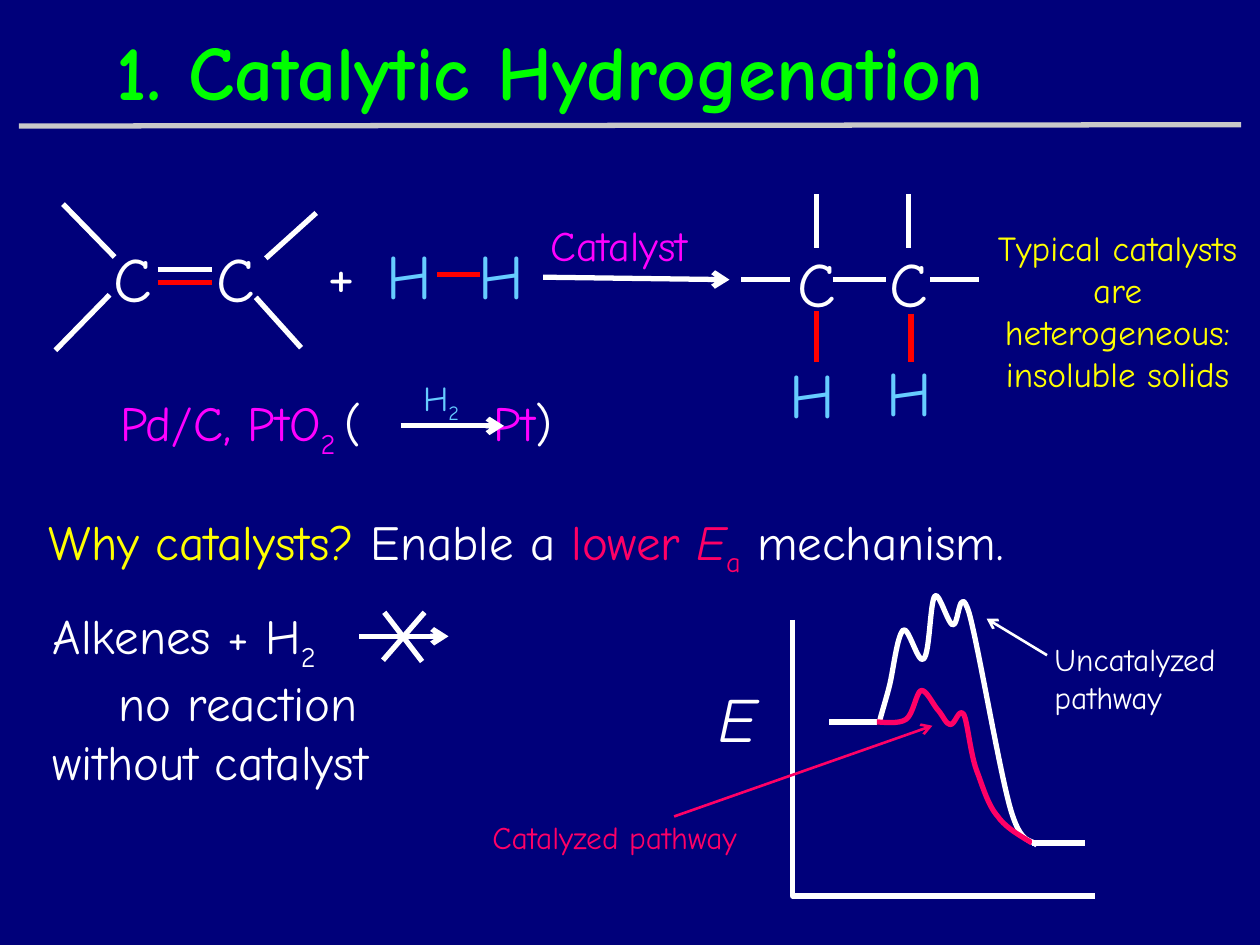
from lxml import etree
from pptx import Presentation
from pptx.dml.color import RGBColor
from pptx.enum import shapes, text
from pptx.oxml import ns

PX = 9144
FONT = "Comic Neue"
HUES = {
    "navy": "00007A", "white": "FFFFFF", "green": "00FF00", "pink": "FF00FF",
    "red": "FF0000", "sky": "66CCFF", "yellow": "FFFF00", "rose": "FF0066",
    "gray": "C9C9C9",
}


def hue(name):
    return RGBColor.from_string(HUES[name])


def emu(*nums):
    return [round(n * PX) for n in nums]


def style(line, tint, width):
    line.color.rgb = hue(tint)
    line.width = round(width * 12700)


def link(parent, box, ends, tint="white", width=3, arrow=False):
    x, y = box
    x1, y1, x2, y2 = ends
    rule = parent.shapes.add_connector(
        shapes.MSO_CONNECTOR.STRAIGHT, *emu(x + x1, y + y1, x + x2, y + y2))
    style(rule.line, tint, width)
    if arrow:
        tail = etree.SubElement(rule.line._get_or_add_ln(), ns.qn("a:tailEnd"))
        tail.set("type", "arrow")
    etree.SubElement(rule._element.spPr, ns.qn("a:effectLst"))


def trace(slide, box, dots, tint="white"):
    x, y = box
    spots = [emu(x + a, y + b) for a, b in dots]
    pen = slide.shapes.build_freeform(*spots[0], scale=1)
    pen.add_line_segments(spots[1:], close=False)
    shape = pen.convert_to_shape()
    shape.shadow.inherit = False
    shape.fill.background()
    style(shape.line, tint, 3)
    return shape


def curve(slide, box, start, arcs, tint="white"):
    dots = [start]
    for arc in arcs:
        dots += zip(arc[::2], arc[1::2])
    shape = trace(slide, box, dots, tint)
    legs = list(shape._element.iter(ns.qn("a:lnTo")))
    for n in range(0, len(legs), 3):
        trio = legs[n:n + 3]
        bend = etree.Element(ns.qn("a:cubicBezTo"))
        trio[0].addprevious(bend)
        for leg in trio:
            bend.append(leg[0])
            leg.getparent().remove(leg)


def add_run(para, words, size, tint, mode=""):
    run = para.add_run()
    run.text = words
    font = run.font
    font.name, font.size = FONT, size * 12700
    font.color.rgb = hue(tint)
    if mode == "bold":
        font.bold = True
    elif mode == "slant":
        font.italic = True
    elif mode == "sub":
        font._element.set("baseline", "-25000")


def add_tab(para, spot):
    stops = etree.SubElement(para._p.get_or_add_pPr(), ns.qn("a:tabLst"))
    stop = etree.SubElement(stops, ns.qn("a:tab"))
    stop.set("pos", str(spot * PX))
    stop.set("algn", "l")


def label(slide, box, area, size, *runs, wrap=True):
    x, y = box
    left, top, wide, high = area
    frame = slide.shapes.add_textbox(*emu(x + left, y + top, wide, high)).text_frame
    frame.word_wrap = wrap
    frame.auto_size = text.MSO_AUTO_SIZE.SHAPE_TO_FIT_TEXT
    para = frame.paragraphs[0]
    for words, *looks in runs:
        add_run(para, words, size, *looks)
    return para


def header(slide, box):
    label(slide, box, (68, 0, 835, 84), 44, ("1. Catalytic Hydrogenation", "green", "bold"))
    link(slide, box, (0, 86, 970, 85), "gray")


def alkene(slide, box):
    for left in (36, 118):
        label(slide, box, (left, 23, 69, 70), 36, ("C", "white"))
    for y, tint in ((52, "white"), (62, "red")):
        link(slide, box, (81, y, 124, y), tint)
    for ends in ((167, 43, 207, 7), (159, 74, 195, 114),
                 (47, 42, 6, 0), (43, 72, 0, 116)):
        link(slide, box, ends)


def reagents(slide, box):
    label(slide, box, (0, 12, 56, 70), 36, ("+", "white"))
    for left, wide in ((47, 52), (120, 62)):
        label(slide, box, (left, 14, wide, 70), 36, ("H", "sky"))
    link(slide, box, (97, 49, 131, 49), "red")
    label(slide, box, (177, 0, 149, 50), 24, ("Catalyst", "pink"))
    link(slide, box, (181, 51, 329, 53), arrow=True)


def alkane(slide, box):
    for left in (35, 108):
        label(slide, box, (left, 35, 69, 70), 36, ("C", "white"))
    for x1, x2 in ((73, 115), (150, 189), (39, 0)):
        link(slide, box, (x1, 68, x2, 68))
    for x, top in ((60, 93), (135, 95)):
        link(slide, box, (x, top, x, 133), "red")
    for x in (133, 60):
        link(slide, box, (x, 0, x, 43))
    for left, top, wide in ((29, 123, 52), (106, 122, 62)):
        label(slide, box, (left, top, wide, 70), 36, ("H", "sky"))


def remark(slide, box):
    para = label(slide, box, (0, 0, 234, 145), 20,
                 ("Typical catalysts are heterogeneous: insoluble solids", "yellow"))
    para.alignment = text.PP_ALIGN.CENTER


def reason(slide, box):
    label(slide, box, (0, 0, 873, 57), 28, ("Why catalysts?", "yellow"),
          (" Enable a ", "white"), ("lower ", "rose"), ("E", "rose", "slant"),
          ("a", "rose", "sub"), (" mechanism.", "white"))


def failure(slide, box):
    para = label(slide, box, (0, 0, 342, 150), 28,
                 ("Alkenes + H", "white"), ("2", "white", "sub"))
    add_tab(para, 52)
    para.add_line_break()
    add_run(para, "\tno reaction without catalyst", 28, "white")
    cross = slide.shapes.add_group_shape()
    link(cross, box, (253, 29, 324, 29), arrow=True)
    link(cross, box, (305, 10, 272, 48))
    link(cross, box, (273, 10, 303, 49))


def metals(slide, box):
    para = label(slide, box, (0, 13, 430, 57), 28, ("Pd/C, PtO", "pink"),
                 ("2 ", "pink", "sub"), ("(\t", "white"), ("Pt", "pink"), (")", "white"))
    add_tab(para, 296)
    link(slide, box, (232, 44, 314, 44), arrow=True)
    label(slide, box, (240, 0, 65, 43), 20, ("H", "sky"), ("2", "sky", "sub"))


def energy(slide, box):
    trace(slide, box, ((248, 31), (248, 250), (488, 250)))
    link(slide, box, (277, 112, 315, 112))
    curve(slide, box, (317, 112), (
        (318, 107, 322, 95, 325, 83), (328, 71, 331, 43, 336, 39),
        (340, 36, 348, 67, 352, 62), (357, 58, 357, 17, 361, 12),
        (364, 8, 371, 33, 375, 35), (380, 37, 380, 0, 388, 25),
        (395, 49, 412, 150, 421, 181), (430, 212, 438, 204, 442, 210)))
    curve(slide, box, (315, 112), (
        (319, 112, 332, 114, 338, 110), (344, 106, 346, 89, 350, 87),
        (354, 86, 359, 97, 363, 102), (367, 106, 370, 114, 373, 114),
        (377, 115, 380, 100, 384, 106), (387, 112, 389, 136, 394, 150),
        (399, 163, 403, 178, 411, 187), (418, 197, 432, 204, 438, 208)), "rose")
    label(slide, box, (179, 73, 48, 70), 36, ("E", "white", "slant"))
    link(slide, box, (438, 208, 480, 208))
    link(slide, box, (154, 187, 359, 115), "rose", 1.5, True)
    label(slide, box, (0, 183, 237, 40), 18, ("Catalyzed pathway", "rose"), wrap=False)
    link(slide, box, (450, 59, 402, 30), "white", 1.5, True)
    label(slide, box, (446, 42, 164, 70), 18, ("Uncatalyzed pathway", "white"))


def main():
    deck = Presentation()
    deck.slide_width, deck.slide_height = emu(1000, 750)
    slide = deck.slides.add_slide(deck.slide_layouts[6])
    slide.background.fill.solid()
    slide.background.fill.fore_color.rgb = hue("navy")
    for draw, box in (
            (header, (15, 14)), (alkene, (44, 162)), (reagents, (250, 169)),
            (alkane, (588, 154)), (remark, (770, 175)), (reason, (29, 401)),
            (failure, (32, 476)), (metals, (86, 294)), (energy, (381, 461))):
        draw(slide, box)
    deck.save("out.pptx")


if __name__ == "__main__":
    main()
